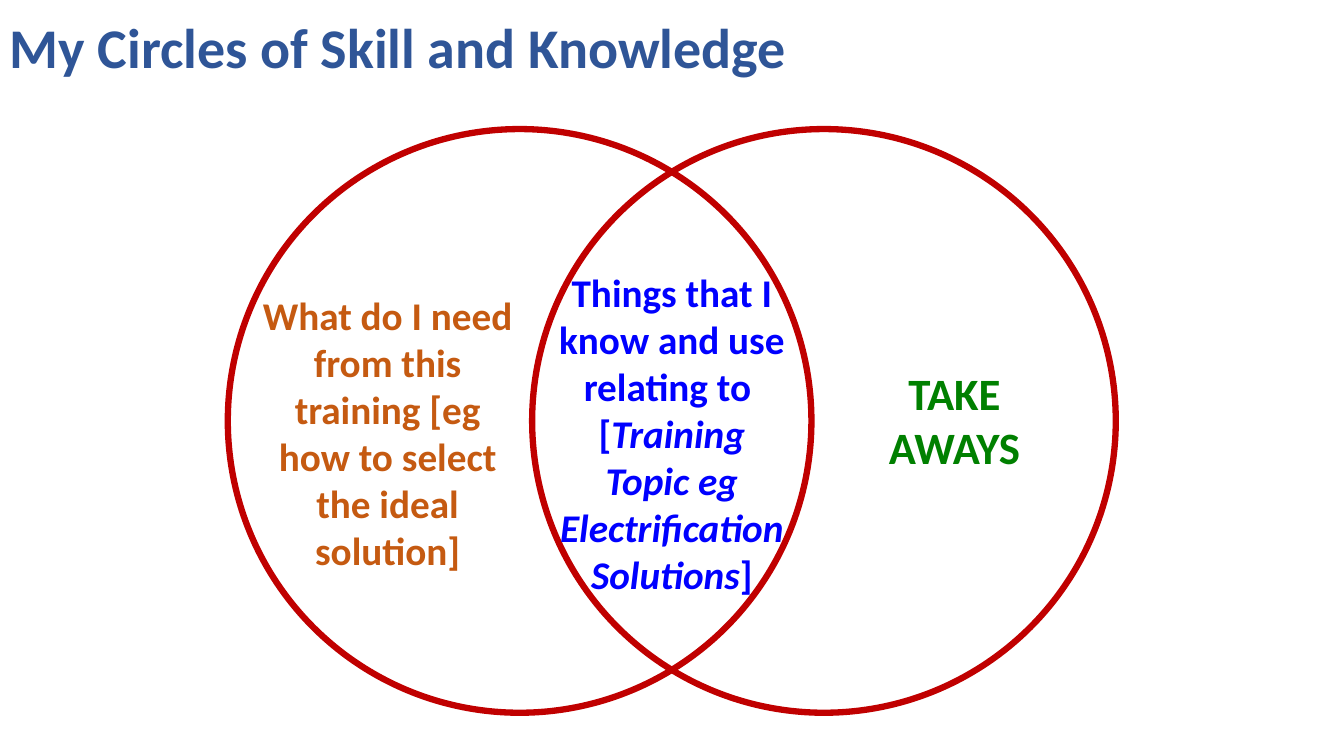
from dataclasses import dataclass

from pptx import Presentation
from pptx import util as u
from pptx.dml import color
from pptx.enum import shapes, text

COLORS = {
    "title": "2F5597",
    "ring": "C00000",
    "takeaways": "008000",
    "known": "0000FF",
    "needs": "C55A11",
}
FONT = "Calibri"
RING_LEFT, RING_TOP, RING_SIZE, RING_STEP = 162.7, 92.2, 416.9, 217.4


@dataclass(frozen=True)
class Span:
    text: str
    italic: bool = False
    break_before: bool = False


@dataclass(frozen=True)
class Label:
    left: float
    top: float
    width: float
    height: float
    size: float
    color: str
    spans: tuple[Span, ...]
    is_title: bool = False


TITLE = Label(0, 0, 839.5, 71.3, 40, "title",
              (Span("My Circles of Skill and Knowledge"),), True)
LABELS = (
    Label(604.8, 257.8, 154.1, 85, 32, "takeaways", (Span("TAKE AWAYS"),)),
    Label(391, 187.9, 177.8, 244.8, 28, "known", (
        Span("Things that I know and use relating to "),
        Span("[", break_before=True),
        Span("Training Topic eg Electrification Solutions", italic=True),
        Span("]"),
    )),
    Label(179.3, 204.5, 195.1, 211, 28, "needs", (
        Span("What do I need from this training "
             "[eg how to select the ideal solution]"),
    )),
)


def rgb(name: str) -> color.RGBColor:
    return color.RGBColor.from_string(COLORS[name])


def add_ring(s, left: float) -> None:
    sp = s.shapes.add_shape(shapes.MSO_SHAPE.OVAL, u.Pt(left), u.Pt(RING_TOP),
                            u.Pt(RING_SIZE), u.Pt(RING_SIZE))
    sp.shadow.inherit = False
    sp.fill.background()
    sp.line.color.rgb = rgb("ring")
    sp.line.width = u.Pt(4.5)


def add_label(s, label: Label) -> None:
    sp = s.shapes.add_textbox(u.Pt(label.left), u.Pt(label.top),
                              u.Pt(label.width), u.Pt(label.height))
    tf = sp.text_frame
    tf.word_wrap = True
    p = tf.paragraphs[0]
    if label.is_title:
        tf.vertical_anchor = text.MSO_ANCHOR.MIDDLE
        p.line_spacing = 0.9
        p.space_after = u.Pt(6)
    else:
        tf.auto_size = text.MSO_AUTO_SIZE.SHAPE_TO_FIT_TEXT
        p.alignment = text.PP_ALIGN.CENTER
    for span in label.spans:
        if span.break_before:
            p.add_line_break()
        r = p.add_run()
        r.text = span.text
        r.font.name = FONT
        r.font.size = u.Pt(label.size)
        r.font.bold = True
        r.font.italic = span.italic
        r.font.color.rgb = rgb(label.color)


def main() -> None:
    prs = Presentation()
    prs.slide_width, prs.slide_height = u.Pt(960), u.Pt(540)
    s = prs.slides.add_slide(prs.slide_layouts[6])
    add_label(s, TITLE)
    for i in range(2):
        add_ring(s, RING_LEFT + i * RING_STEP)
    for label in LABELS:
        add_label(s, label)
    prs.save("out.pptx")


if __name__ == "__main__":
    main()
